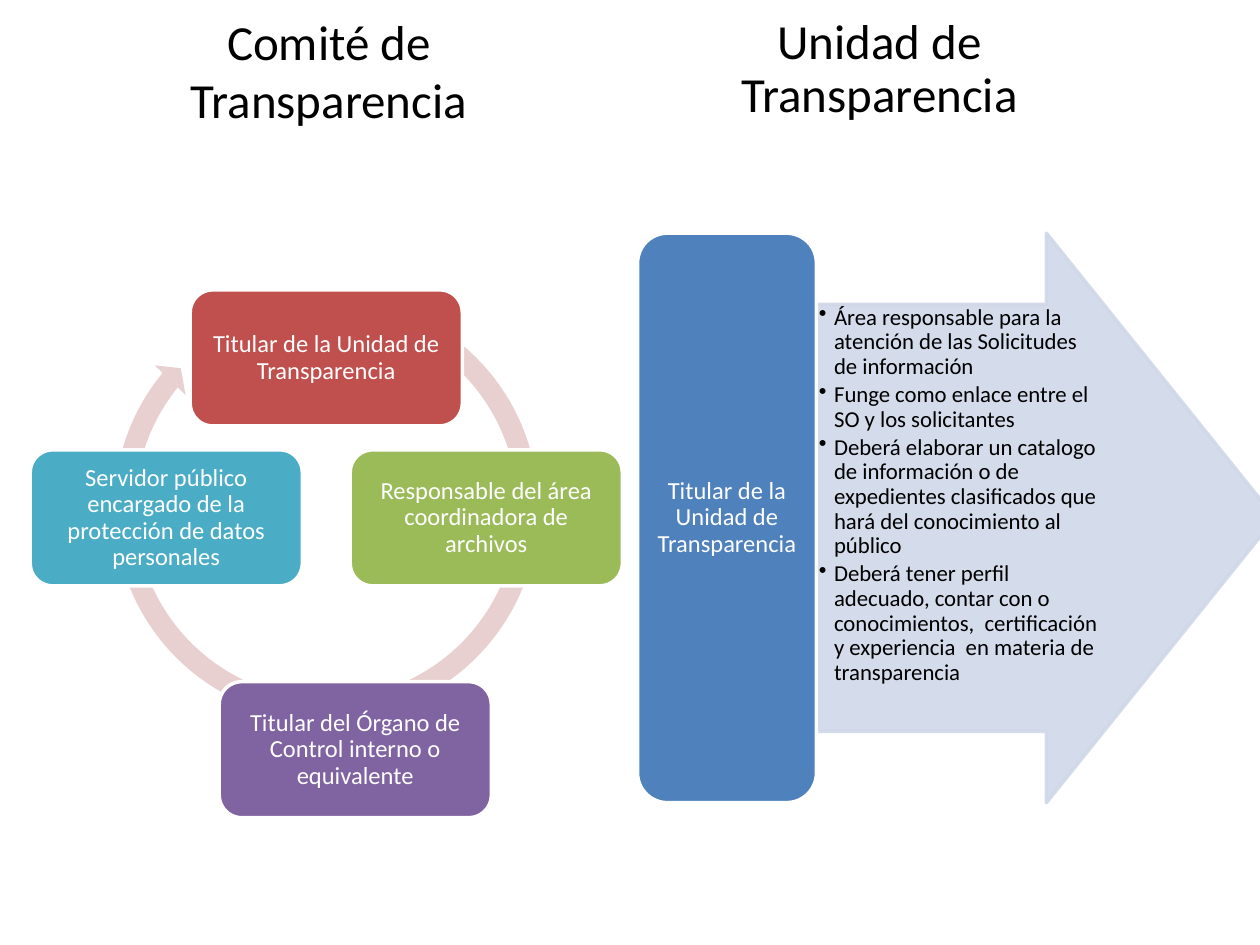
from dataclasses import dataclass
from lxml import etree
from pptx import Presentation
from pptx import util as u
from pptx.dml.color import RGBColor
from pptx.enum import shapes, text
from pptx.oxml.ns import qn


@dataclass(frozen=True)
class Theme:
    font: str = "Calibri"
    heading: int = 28
    label: int = 14
    body: int = 13
    ink: str = "000000"
    paper: str = "FFFFFF"
    ring: str = "E8D0D0"
    arrow: str = "D0D8E8"
    bar: str = "4F81BD"
    edge: int = 2


T = Theme()
WIDTH, HEIGHT = 10, 7.5

HEADINGS = ["Comité de Transparencia", "Unidad de Transparencia"]
HEADING_AT = [(6.9, 0.13, 38.4, 14.53), (50.6, 0.13, 38.4, 14.53)]

MEMBER_SIZE = (21.6, 14.4)
MEMBERS = [
    ("Titular de la Unidad de Transparencia", "C0504D", (15.1, 30.67)),
    ("Responsable del área coordinadora de archivos", "9BBB59", (27.8, 47.6)),
    ("Titular del Órgano de Control interno o equivalente", "8064A2", (17.4, 72.13)),
    ("Servidor público encargado de la protección de datos personales", "4BACC6", (2.4, 47.6)),
]
RING_AT = (8.2, 30.13, 35.4, 47.2)
RING_ADJ = (0.047, 2.729, 131.542, 178.148, 0.048)

HEAD_OF_UNIT = "Titular de la Unidad de Transparencia"
BAR_AT = (50.6, 24.67, 14.2, 60.27)
ARROW_AT = (64.9, 24.67, 36.3, 60.27)
DUTIES = [
    "Área responsable para la atención de las Solicitudes de información",
    "Funge como enlace entre el SO y los solicitantes",
    "Deberá elaborar un catalogo de información o de expedientes clasificados "
    "que hará del conocimiento al público",
    "Deberá tener perfil adecuado, contar con o conocimientos,  certificación "
    "y experiencia  en materia de transparencia",
]


def place(at):
    x, y, w, h = at
    return [u.Inches(share * side / 100)
            for share, side in ((x, WIDTH), (y, HEIGHT), (w, WIDTH), (h, HEIGHT))]


def add_shape(s, kind, at, fill, edge=None, adj=()):
    sp = s.shapes.add_shape(kind, *place(at))
    sp.shadow.inherit = False
    sp.fill.solid()
    sp.fill.fore_color.rgb = RGBColor.from_string(fill)
    if edge:
        sp.line.color.rgb = RGBColor.from_string(edge)
        sp.line.width = u.Pt(T.edge)
    else:
        sp.line.fill.background()
    for i, value in enumerate(adj):
        sp.adjustments[i] = value
    return sp


def add_bullet(p, indent):
    pPr = p._p.get_or_add_pPr()
    pPr.set("marL", str(u.Inches(indent)))
    pPr.set("indent", str(-u.Inches(indent)))
    etree.SubElement(pPr, qn("a:buChar")).set("char", "•")


def write(sp, lines, size, color, inset, align=text.PP_ALIGN.CENTER,
          anchor=text.MSO_ANCHOR.MIDDLE, spacing=0.9, after=0, bullet=0):
    tf = sp.text_frame
    frame = {"word_wrap": True, "auto_size": text.MSO_AUTO_SIZE.NONE, "vertical_anchor": anchor,
             "margin_left": u.Inches(inset[0]), "margin_right": u.Inches(inset[0]),
             "margin_top": u.Inches(inset[1]), "margin_bottom": u.Inches(inset[1])}
    for name, value in frame.items():
        setattr(tf, name, value)
    for i, line in enumerate(lines):
        p = tf.paragraphs[0] if i == 0 else tf.add_paragraph()
        layout = {"alignment": align, "line_spacing": spacing,
                  "space_before": u.Pt(0), "space_after": u.Pt(after)}
        for name, value in layout.items():
            setattr(p, name, value)
        if bullet:
            add_bullet(p, bullet)
        r = p.add_run()
        r.text = line
        for name, value in {"name": T.font, "size": u.Pt(size), "bold": False}.items():
            setattr(r.font, name, value)
        r.font.color.rgb = RGBColor.from_string(color)


def add_headings(s):
    title = s.shapes.title
    title.left, title.top, title.width, title.height = place(HEADING_AT[0])
    write(title, HEADINGS[:1], T.heading, T.ink, (0.1, 0.05), spacing=1.0)
    box = s.shapes.add_textbox(*place(HEADING_AT[1]))
    write(box, HEADINGS[1:], T.heading, T.ink, (0.07, 0.04))


def add_committee(s):
    add_shape(s, shapes.MSO_SHAPE.CIRCULAR_ARROW, RING_AT, T.ring, adj=RING_ADJ)
    for name, color, corner in MEMBERS:
        sp = add_shape(s, shapes.MSO_SHAPE.ROUNDED_RECTANGLE, corner + MEMBER_SIZE, color, T.paper)
        write(sp, [name], T.label, T.paper, (0.06, 0.06))


def add_unit(s):
    arrow = add_shape(s, shapes.MSO_SHAPE.RIGHT_ARROW, ARROW_AT, T.arrow, T.arrow, (0.75, 0.5))
    for color in arrow._element.spPr.iter(qn("a:srgbClr")):
        etree.SubElement(color, qn("a:alpha")).set("val", "90000")
    write(arrow, DUTIES, T.body, T.ink, (0.01, 0.01), text.PP_ALIGN.LEFT,
          text.MSO_ANCHOR.TOP, after=2, bullet=0.12)
    bar = add_shape(s, shapes.MSO_SHAPE.ROUNDED_RECTANGLE, BAR_AT, T.bar, T.paper)
    write(bar, [HEAD_OF_UNIT], T.label, T.paper, (0.06, 0.03))


def main():
    prs = Presentation()
    prs.slide_width, prs.slide_height = u.Inches(WIDTH), u.Inches(HEIGHT)
    s = prs.slides.add_slide(prs.slide_layouts[5])
    add_headings(s)
    add_committee(s)
    add_unit(s)
    prs.save("out.pptx")


if __name__ == "__main__":
    main()
